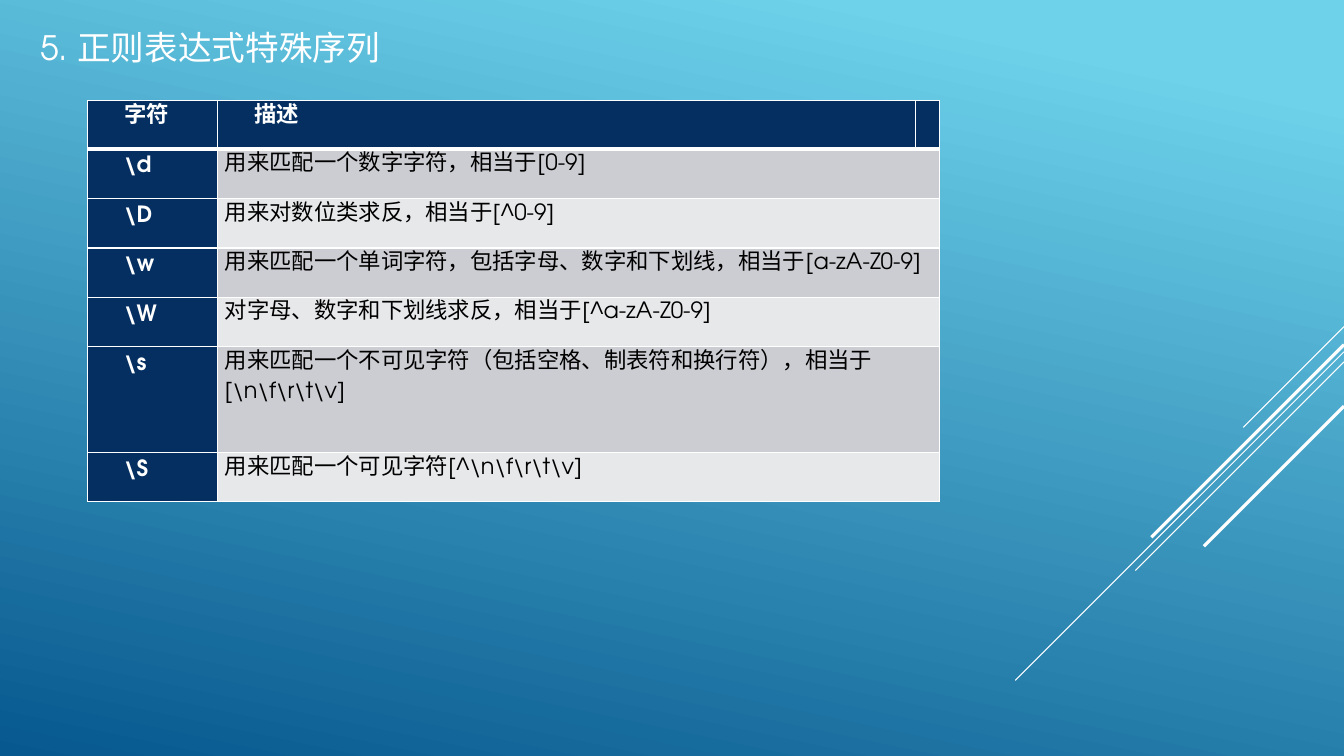
import pptx
import pptx.dml.color
import pptx.enum.shapes
import pptx.oxml
import pptx.oxml.ns
import pptx.util
from pptx.util import Inches

RGB = pptx.dml.color.RGBColor
WHITE = RGB(0xFF, 0xFF, 0xFF)
BLACK = RGB(0, 0, 0)
NAVY = RGB(0x05, 0x2F, 0x61)
DARK = RGB(0xCC, 0xCD, 0xD2)
LIGHT = RGB(0xE7, 0xE8, 0xEA)
SKY = RGB(0x6E, 0xD2, 0xEB)
SEA = RGB(0x06, 0x58, 0x8E)

WIDTH, HEIGHT = 13.33, 7.5
RAYS = [(3.24, 1, 0.75), (3.49, 3.26, 0.75), (3.59, 2.07, 0.75),
        (3.42, 1.91, 2.25), (4.03, 1.39, 2.25)]
COLS = [1.29, 6.92, 0.15]
ROWS = [0.48, 0.49, 0.49, 0.49, 0.49, 1.05, 0.49]
TERMS = [
    ("字符", "描述"),
    ("\\d", "用来匹配一个数字字符，相当于[0-9]"),
    ("\\D", "用来对数位类求反，相当于[^0-9]"),
    ("\\w", "用来匹配一个单词字符，包括字母、数字和下划线，相当于[a-zA-Z0-9]"),
    ("\\W", "对字母、数字和下划线求反，相当于[^a-zA-Z0-9]"),
    ("\\s", "用来匹配一个不可见字符（包括空格、制表符和换行符），相当于[\\n\\f\\r\\t\\v]"),
    ("\\S", "用来匹配一个可见字符[^\\n\\f\\r\\t\\v]"),
]


class Deck:
    """Holds the text style and the current slide, and draws each kind of element."""

    font = "TeX Gyre Adventor"

    def __init__(self):
        self.show = pptx.Presentation()
        self.show.slide_width = Inches(WIDTH)
        self.show.slide_height = Inches(HEIGHT)
        self.slide = self.show.slides.add_slide(self.show.slide_layouts[6])

    def back(self, angle, *stops):
        fill = self.slide.background.fill
        fill.gradient()
        fill.gradient_angle = 360 - angle
        for stop, (place, color) in zip(fill.gradient_stops, stops):
            stop.position = place
            stop.color.rgb = color

    def ray(self, top, size, weight):
        line = self.slide.shapes.add_connector(
            pptx.enum.shapes.MSO_CONNECTOR.STRAIGHT, Inches(WIDTH), Inches(top),
            Inches(WIDTH - size), Inches(top + size))
        line.line.color.rgb = WHITE
        line.line.width = pptx.util.Pt(weight)
        line._element.spPr.append(pptx.oxml.parse_xml(
            f'<a:effectLst {pptx.oxml.ns.nsdecls("a")}/>'))

    def run(self, para, text, size, color, bold=False):
        run = para.add_run()
        run.text = text
        run.font.name = self.font
        run.font.size = pptx.util.Pt(size)
        run.font.bold = bold
        run.font.color.rgb = color

    def title(self, text, left, top, width, height):
        box = self.slide.shapes.add_textbox(*map(Inches, (left, top, width, height)))
        box.text_frame.word_wrap = True
        para = box.text_frame.paragraphs[0]
        para.space_before = pptx.util.Pt(4.8)
        para.space_after = pptx.util.Pt(6)
        self.run(para, text, 24, WHITE)

    def edge(self, cell, **sides):
        props = cell._tc.get_or_add_tcPr()
        for place, side in enumerate("LRTB"):
            width = pptx.util.Pt(sides.get(side, 1))
            props.insert(place, pptx.oxml.parse_xml(
                f'<a:ln{side} {pptx.oxml.ns.nsdecls("a")} w="{width}"><a:solidFill>'
                f'<a:srgbClr val="{WHITE}"/></a:solidFill></a:ln{side}>'))

    def cell(self, cell, text, color, bold, indent):
        cell.margin_left = cell.margin_right = Inches(0.07)
        cell.margin_top = cell.margin_bottom = 0
        para = cell.text_frame.paragraphs[0]
        para.line_spacing = pptx.util.Pt(20)
        if indent:
            para._p.get_or_add_pPr().set("indent", str(Inches(0.29)))
        self.run(para, text, 16, color, bold)

    def table(self, left, top, terms):
        table = self.slide.shapes.add_table(
            len(ROWS), len(COLS), Inches(left), Inches(top),
            Inches(sum(COLS)), Inches(sum(ROWS))).table
        table.first_row = table.horz_banding = False
        for col, width in zip(table.columns, COLS):
            col.width = Inches(width)
        for row, height in zip(table.rows, ROWS):
            row.height = Inches(height)
        for r, pair in enumerate(terms):
            band = DARK if r % 2 else LIGHT
            for c in range(len(COLS)):
                cell = table.cell(r, c)
                head = r == 0 or c == 0
                cell.fill.solid()
                cell.fill.fore_color.rgb = NAVY if head else band
                self.edge(cell, T=3 if r == 1 else 1, B=3 if r == 0 else 1)
                if c < len(pair):
                    self.cell(cell, pair[c], WHITE if head else BLACK, head, head)
            if r:
                table.cell(r, 1).merge(table.cell(r, 2))


def main():
    deck = Deck()
    deck.back(102, (0.1, SKY), (1, SEA))
    for ray in RAYS:
        deck.ray(*ray)
    deck.title("5. 正则表达式特殊序列", 0.3, 0.22, 9.56, 6.3)
    deck.table(0.87, 1, TERMS)
    deck.show.save("out.pptx")


if __name__ == "__main__":
    main()
